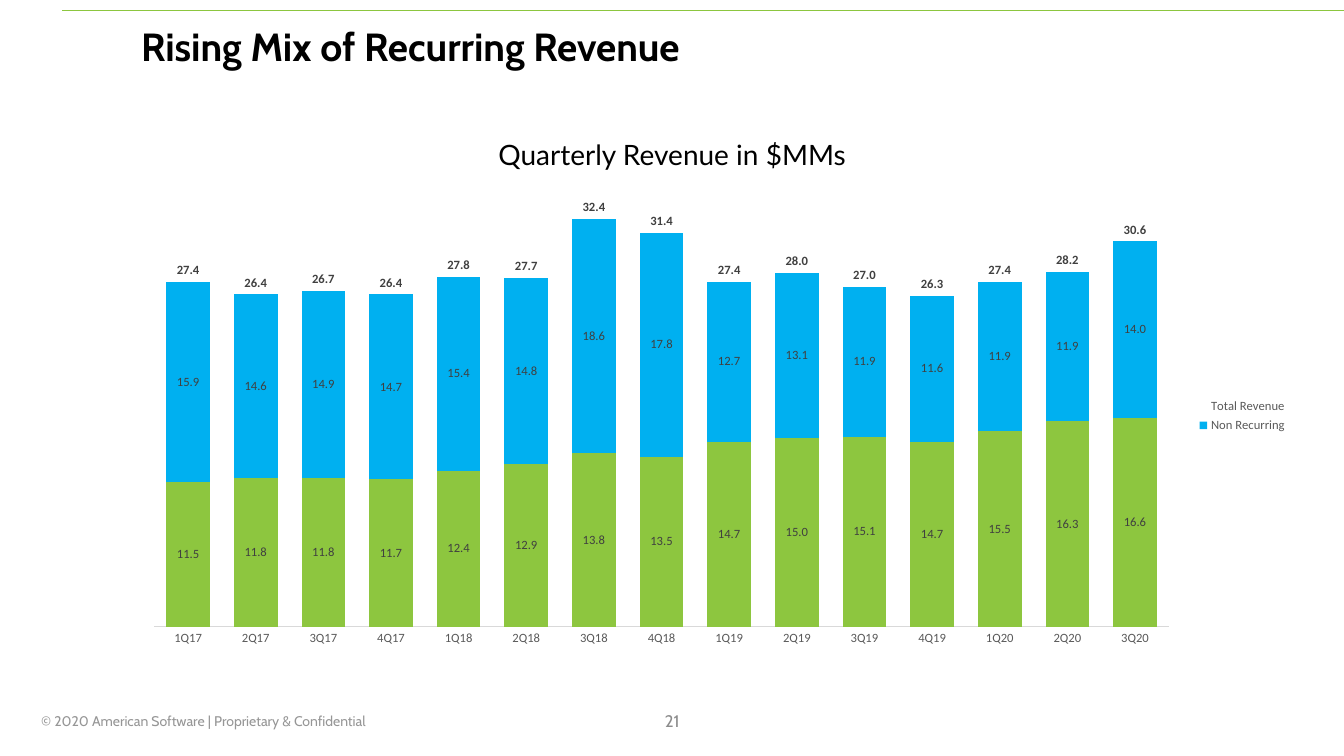
"""Build the slide on the rising mix of recurring revenue."""
from dataclasses import dataclass

from lxml import etree
from pptx import Presentation
from pptx import util as u
from pptx.chart import data as chart_data
from pptx.dml.color import RGBColor
from pptx.enum import chart as charts, shapes, text
from pptx.oxml import ns

TITLE = "Rising Mix of Recurring Revenue"
SUBTITLE = "Quarterly Revenue in $MMs"
COPYRIGHT = "© 2020 American Software | Proprietary & Confidential"
PAGE_NUMBER = "21"
QUARTERS = [f"{quarter}Q{year}" for year in range(17, 21) for quarter in range(1, 5)][:15]
RECURRING = [11.5, 11.8, 11.8, 11.7, 12.4, 12.9, 13.8, 13.5, 14.7, 15, 15.1, 14.7, 15.5, 16.3, 16.6]
NON_RECURRING = [15.9, 14.6, 14.9, 14.7, 15.4, 14.8, 18.6, 17.8, 12.7, 13.1, 11.9, 11.6, 11.9, 11.9, 14]
TOTAL = [27.4, 26.4, 26.7, 26.4, 27.8, 27.7, 32.4, 31.4, 27.4, 28, 27, 26.3, 27.4, 28.2, 30.6]


@dataclass(frozen=True)
class Theme:
    heading: str = "Cabin"
    caption: str = "Lato"
    chart: str = "Calibri"
    black: str = "000000"
    rule: str = "8CC63F"
    recurring: str = "8DC63F"
    non_recurring: str = "00B0F0"
    footer: str = "969696"
    number: str = "8C8C8C"
    axis_line: str = "D9D9D9"
    axis_text: str = "595959"
    label_text: str = "404040"
    title_size: int = 28
    caption_size: int = 20
    number_size: int = 12
    footer_size: int = 10
    chart_size: int = 9


THEME = Theme()
SERIES = [
    ("Series 1", RECURRING, THEME.recurring),
    ("Non Recurring", NON_RECURRING, THEME.non_recurring),
    ("Total Revenue", TOTAL, None),
]
PLOT_AREA = {"x": 0.02, "y": 0.02, "w": 0.87, "h": 0.92}


def set_font(font, face, size, color, bold=False):
    font.name, font.size, font.bold = face, u.Pt(size), bold
    font.color.rgb = RGBColor.from_string(color)


def write(box, words, face, size, color, bold=False, align=text.PP_ALIGN.LEFT,
          anchor=text.MSO_ANCHOR.TOP, spacing=1.0):
    frame = box.text_frame
    frame.word_wrap = True
    frame.auto_size = text.MSO_AUTO_SIZE.NONE
    frame.vertical_anchor = anchor
    para = frame.paragraphs[0]
    para.alignment, para.line_spacing = align, spacing
    span = para.add_run()
    span.text = words
    set_font(span.font, face, size, color, bold)


def add_text(page, place, words, **style):
    write(page.shapes.add_textbox(*map(u.Cm, place)), words, **style)


def add_rule(page):
    rule = page.shapes.add_connector(
        shapes.MSO_CONNECTOR.STRAIGHT, *map(u.Cm, (1.57, 0.25, 33.87, 0.25)))
    rule.line.color.rgb = RGBColor.from_string(THEME.rule)
    rule.line.width = u.Pt(0.5)
    etree.SubElement(rule._element.spPr, ns.qn("a:effectLst"))


def place_plot(chart):
    area = chart._chartSpace.find(".//" + ns.qn("c:plotArea"))
    for old in area.findall(ns.qn("c:layout")):
        area.remove(old)
    layout = etree.Element(ns.qn("c:layout"))
    area.insert(0, layout)
    manual = etree.SubElement(layout, ns.qn("c:manualLayout"))
    settings = {"layoutTarget": "inner", "xMode": "edge", "yMode": "edge", **PLOT_AREA}
    for name, value in settings.items():
        etree.SubElement(manual, ns.qn(f"c:{name}")).set("val", str(value))


def add_legend(chart):
    chart.has_legend = True
    legend = chart.legend
    legend.position = charts.XL_LEGEND_POSITION.RIGHT
    legend.include_in_layout = False
    set_font(legend.font, THEME.chart, THEME.chart_size, THEME.axis_text)
    entry = etree.Element(ns.qn("c:legendEntry"))
    for name, value in (("idx", "0"), ("delete", "1")):
        etree.SubElement(entry, ns.qn(f"c:{name}")).set("val", value)
    legend._element.find(ns.qn("c:legendPos")).addnext(entry)


def format_axes(chart):
    for axis in (chart.category_axis, chart.value_axis):
        axis.has_major_gridlines = False
        axis.major_tick_mark = axis.minor_tick_mark = charts.XL_TICK_MARK.NONE
        set_font(axis.tick_labels.font, THEME.chart, THEME.chart_size, THEME.axis_text)
    line = chart.category_axis.format.line
    line.color.rgb = RGBColor.from_string(THEME.axis_line)
    line.width = u.Pt(0.75)
    values = chart.value_axis
    values.minimum_scale, values.maximum_scale = 0, 35
    values.tick_label_position = charts.XL_TICK_LABEL_POSITION.NONE
    values.format.line.fill.background()


def format_series(series, color):
    is_total = color is None
    fill = series.format.fill
    if is_total:
        fill.background()
    else:
        fill.solid()
        fill.fore_color.rgb = RGBColor.from_string(color)
    series.format.line.fill.background()
    series.invert_if_negative = False
    labels = series.data_labels
    labels.show_value = True
    labels.number_format, labels.number_format_is_linked = "#,##0.0", False
    position = charts.XL_LABEL_POSITION
    labels.position = position.INSIDE_BASE if is_total else position.CENTER
    set_font(labels.font, THEME.chart, THEME.chart_size, THEME.label_text, bold=is_total)


def add_revenue_chart(page):
    revenue = chart_data.CategoryChartData(number_format="0.0")
    revenue.categories = QUARTERS
    for name, values, _ in SERIES:
        revenue.add_series(name, values)
    chart = page.shapes.add_chart(
        charts.XL_CHART_TYPE.COLUMN_STACKED, *map(u.Cm, (3.3, 4.45, 29.39, 12.07)), revenue).chart
    chart.has_title = False
    set_font(chart.font, THEME.chart, THEME.chart_size, THEME.black)
    plot = chart.plots[0]
    plot.gap_width, plot.overlap, plot.vary_by_categories = 55, 100, False
    for series, (_, _, color) in zip(plot.series, SERIES):
        format_series(series, color)
    format_axes(chart)
    add_legend(chart)
    place_plot(chart)


def main():
    deck = Presentation()
    deck.slide_width, deck.slide_height = u.Cm(33.87), u.Cm(19.05)
    page = deck.slides.add_slide(deck.slide_layouts.get_by_name("Title Only"))
    add_text(page, (0.79, 17.83, 9.53, 0.69), COPYRIGHT,
             face=THEME.heading, size=THEME.footer_size, color=THEME.footer)
    add_rule(page)
    title = page.shapes.title
    title.left, title.top, title.width, title.height = map(u.Cm, (3.3, 0.28, 29.39, 1.88))
    write(title, TITLE, THEME.heading, THEME.title_size, THEME.black, bold=True,
          anchor=text.MSO_ANCHOR.MIDDLE, spacing=0.9)
    add_revenue_chart(page)
    add_text(page, (11.35, 3.33, 11.18, 1.12), SUBTITLE, face=THEME.caption,
             size=THEME.caption_size, color=THEME.black, align=text.PP_ALIGN.CENTER)
    add_text(page, (13.13, 17.65, 7.62, 1.02), PAGE_NUMBER, face=THEME.heading,
             size=THEME.number_size, color=THEME.number, align=text.PP_ALIGN.CENTER,
             anchor=text.MSO_ANCHOR.MIDDLE)
    deck.save("out.pptx")


if __name__ == "__main__":
    main()
